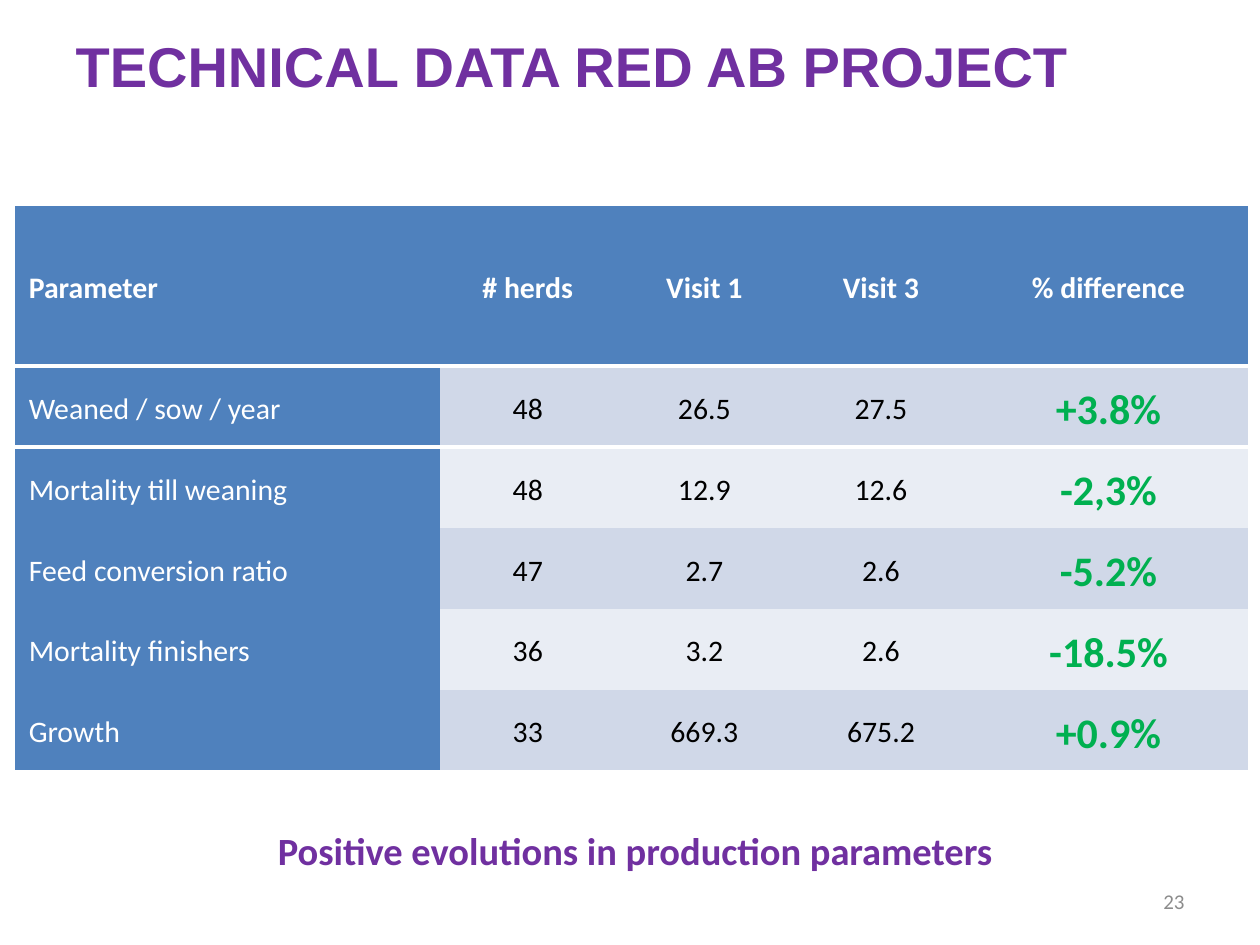
from lxml import etree
from pptx import Presentation
from pptx.dml.color import RGBColor
from pptx.enum.text import MSO_ANCHOR, PP_ALIGN
from pptx.oxml.ns import qn
from pptx.util import Cm, Pt

COLORS = {
    "purple": "7030A0", "blue": "4F81BD", "band": "D0D8E8", "light": "E9EDF4",
    "white": "FFFFFF", "black": "000000", "green": "00B050", "grey": "8C8C8C",
}
NO_STYLE_NO_GRID = "{2D5ABB26-0587-4C30-8999-92F81FD0307C}"
COL_WIDTHS = [8.56, 3.56, 3.56, 3.56, 5.61]
HEADER_HEIGHT, ROW_HEIGHT = 3.25, 1.63
ROWS = [
    ["Parameter", "# herds", "Visit 1", "Visit 3", "% difference"],
    ["Weaned / sow / year", "48", "26.5", "27.5", "+3.8%"],
    ["Mortality till weaning", "48", "12.9", "12.6", "-2,3%"],
    ["Feed conversion ratio", "47", "2.7", "2.6", "-5.2%"],
    ["Mortality finishers", "36", "3.2", "2.6", "-18.5%"],
    ["Growth", "33", "669.3", "675.2", "+0.9%"],
]


def rgb(name):
    return RGBColor.from_string(COLORS[name])


class SlideBuilder:
    def __init__(self, prs, font="Calibri"):
        self.font = font
        self.s = prs.slides.add_slide(prs.slide_layouts[5])

    def add_text(self, tf, text, size, color, bold=False, align=PP_ALIGN.LEFT, font=None):
        p = tf.paragraphs[0]
        p.alignment = align
        r = p.add_run()
        r.text = text
        r.font.name = font or self.font
        r.font.size = Pt(size)
        r.font.bold = bold
        r.font.color.rgb = rgb(color)
        return p

    def title(self, text, x, y, w, h):
        sp = self.s.shapes.title
        sp.left, sp.top, sp.width, sp.height = Cm(x), Cm(y), Cm(w), Cm(h)
        sp.text_frame.vertical_anchor = MSO_ANCHOR.MIDDLE
        self.add_text(sp.text_frame, text, 32, "purple", bold=True, font="Arial")

    def text(self, text, x, y, w, h, size, color, anchor=MSO_ANCHOR.TOP, **style):
        tf = self.s.shapes.add_textbox(Cm(x), Cm(y), Cm(w), Cm(h)).text_frame
        tf.word_wrap = True
        tf.vertical_anchor = anchor
        self.add_text(tf, text, size, color, **style)

    def border(self, cell, side, points):
        """Add a white border; call for the top before the bottom."""
        tcPr = cell._tc.get_or_add_tcPr()
        ln = etree.Element(qn(f"a:ln{side}"), w=str(Pt(points)))
        fill = etree.SubElement(ln, qn("a:solidFill"))
        etree.SubElement(fill, qn("a:srgbClr"), val=COLORS["white"])
        tcPr.find(qn("a:solidFill")).addprevious(ln)

    def cell(self, cell, text, row, col):
        header, label = row == 0, col == 0
        change = not header and col == len(COL_WIDTHS) - 1
        cell.margin_left = cell.margin_right = Cm(0.08)
        cell.margin_top = cell.margin_bottom = 0
        cell.vertical_anchor = MSO_ANCHOR.MIDDLE
        cell.fill.solid()
        fill = "blue" if header or label else "band" if row % 2 else "light"
        cell.fill.fore_color.rgb = rgb(fill)
        color = "white" if header or label else "green" if change else "black"
        p = self.add_text(cell.text_frame, text, 24 if change else 17, color,
                          bold=header or change,
                          align=PP_ALIGN.LEFT if label else PP_ALIGN.CENTER)
        p.line_spacing = 1.15
        p.space_before = Pt(10)
        if label:
            p._p.get_or_add_pPr().set("marL", str(Cm(0.2)))
        if row <= 1:
            self.border(cell, "T", 3 if row else 1)
        if header:
            self.border(cell, "B", 3)
        elif row == len(ROWS) - 1:
            self.border(cell, "B", 1)

    def table(self, rows, x, y):
        heights = [HEADER_HEIGHT] + [ROW_HEIGHT] * (len(rows) - 1)
        frame = self.s.shapes.add_table(len(rows), len(COL_WIDTHS), Cm(x), Cm(y),
                                        Cm(sum(COL_WIDTHS)), Cm(sum(heights)))
        table = frame.table
        table._tbl.tblPr.find(qn("a:tableStyleId")).text = NO_STYLE_NO_GRID
        for column, width in zip(table.columns, COL_WIDTHS):
            column.width = Cm(width)
        for i, values in enumerate(rows):
            table.rows[i].height = Cm(heights[i])
            for j, value in enumerate(values):
                self.cell(table.cell(i, j), value, i, j)


def main():
    prs = Presentation()
    prs.slide_width, prs.slide_height = Cm(25.4), Cm(19.05)
    slide = SlideBuilder(prs)
    slide.title("TECHNICAL DATA RED AB PROJECT", 1.27, 0.76, 22.86, 1.09)
    slide.text("23", 18.2, 17.65, 5.93, 1.02, 12, "grey",
               anchor=MSO_ANCHOR.MIDDLE, align=PP_ALIGN.RIGHT)
    slide.table(ROWS, 0.3, 4.13)
    slide.text("Positive evolutions in production parameters", 0.5, 16.54, 24.61, 1.19,
               22, "purple", bold=True, align=PP_ALIGN.CENTER)
    prs.save("out.pptx")


if __name__ == "__main__":
    main()
